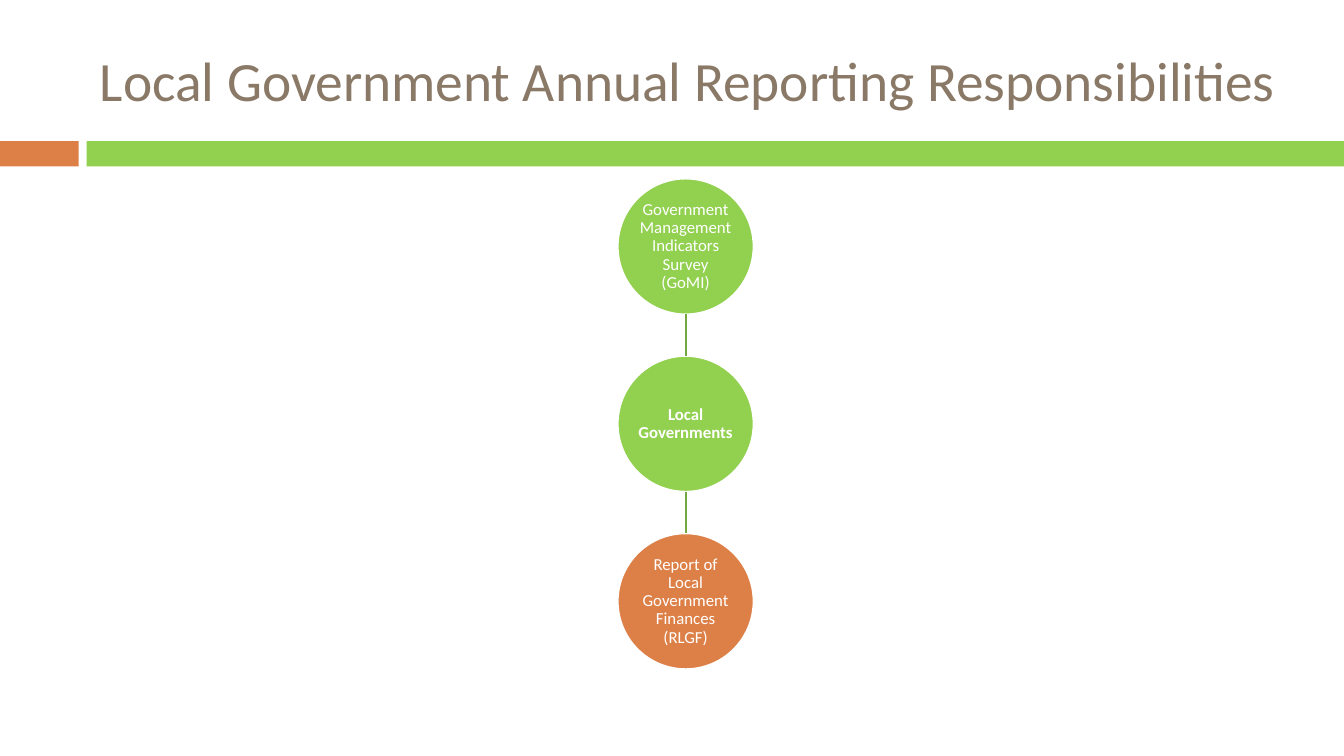
from lxml import etree
from pptx import Presentation
from pptx.dml.color import RGBColor
from pptx.enum.shapes import MSO_CONNECTOR, MSO_SHAPE
from pptx.enum.text import MSO_ANCHOR, MSO_AUTO_SIZE, PP_ALIGN
from pptx.oxml.ns import qn
from pptx.util import Inches, Pt

GREEN = RGBColor(0x92, 0xD0, 0x50)
DARK_GREEN = RGBColor(0x75, 0xA7, 0x40)
ORANGE = RGBColor(0xDD, 0x80, 0x47)
BROWN = RGBColor(0x8A, 0x79, 0x67)
WHITE = RGBColor(0xFF, 0xFF, 0xFF)

RECTANGLE, OVAL = MSO_SHAPE.RECTANGLE, MSO_SHAPE.OVAL
STRAIGHT = MSO_CONNECTOR.STRAIGHT
MIDDLE = MSO_ANCHOR.MIDDLE
LEFT, CENTER = PP_ALIGN.LEFT, PP_ALIGN.CENTER
NO_FIT = MSO_AUTO_SIZE.NONE

TITLE_ONLY = 5
WIDTH, HEIGHT = Inches(13.33), Inches(7.5)

# Shares of the slide's width (columns) and height (rows)
BAND_TOP, BAND_HEIGHT = 1.4 / 7.5, 0.25 / 7.5
ACCENT_WIDTH, BAND_LEFT = 0.78 / 13.33, 0.86 / 13.33
CHAIN_CENTER = 6.8 / 13.33
FIRST_TOP, STEP = 1.77 / 7.5, 1.76 / 7.5
DIAMETER = 1.35 / 7.5


class ReportingSlide:
    """Holds the style and the current slide."""

    font_name = "Calibri"
    line_width = Pt(1.5)

    def __init__(self, presentation):
        layout = presentation.slide_layouts[TITLE_ONLY]
        self.slide = presentation.slides.add_slide(layout)
        self.shapes = self.slide.shapes

    def style_text(self, shape, text, size, color, alignment, bold=False):
        frame = shape.text_frame
        frame.text = text
        frame.word_wrap = True
        frame.auto_size = NO_FIT
        frame.vertical_anchor = MIDDLE
        paragraph = frame.paragraphs[0]
        paragraph.alignment = alignment
        paragraph.font.name = self.font_name
        paragraph.font.size = Pt(size)
        paragraph.font.bold = bold
        paragraph.font.color.rgb = color
        return frame, paragraph

    def title(self, text, left, top, width, height):
        title = self.shapes.title
        title.left, title.width = int(left * WIDTH), int(width * WIDTH)
        title.top, title.height = int(top * HEIGHT), int(height * HEIGHT)
        frame, _ = self.style_text(title, text, 39.6, BROWN, LEFT)
        frame.margin_right = 0

    def band(self, left, right, color):
        band = self.shapes.add_shape(
            RECTANGLE, int(left * WIDTH), int(BAND_TOP * HEIGHT),
            int((right - left) * WIDTH), int(BAND_HEIGHT * HEIGHT))
        band.shadow.inherit = False
        band.fill.solid()
        band.fill.fore_color.rgb = color
        band.line.fill.background()

    def circle(self, text, row, color, bold):
        side = int(DIAMETER * HEIGHT)
        circle = self.shapes.add_shape(
            OVAL, int(CHAIN_CENTER * WIDTH) - side // 2,
            int((FIRST_TOP + row * STEP) * HEIGHT), side, side)
        circle.shadow.inherit = False
        circle.fill.solid()
        circle.fill.fore_color.rgb = color
        circle.line.color.rgb = WHITE
        circle.line.width = self.line_width
        frame, paragraph = self.style_text(circle, text, 12, WHITE, CENTER, bold)
        paragraph.line_spacing = 0.9
        # The longest word needs the full width inside the circle
        frame.margin_left = frame.margin_right = 0
        frame.margin_top = frame.margin_bottom = 0

    def link(self, row):
        """Draw the line from the circle in this row to the next one."""
        center = int(CHAIN_CENTER * WIDTH)
        top = FIRST_TOP + row * STEP + DIAMETER
        bottom = FIRST_TOP + (row + 1) * STEP
        link = self.shapes.add_connector(
            STRAIGHT, center, int(top * HEIGHT), center, int(bottom * HEIGHT))
        link.line.color.rgb = DARK_GREEN
        link.line.width = self.line_width
        etree.SubElement(link._element.spPr, qn("a:effectLst"))


def main():
    presentation = Presentation()
    presentation.slide_width, presentation.slide_height = WIDTH, HEIGHT
    page = ReportingSlide(presentation)

    # Title and the two-colour band below it
    page.title("Local Government Annual Reporting Responsibilities",
               0.89 / 13.33, 0.25 / 7.5, 11.89 / 13.33, 1.08 / 7.5)
    page.band(0, ACCENT_WIDTH, ORANGE)
    page.band(BAND_LEFT, 1, GREEN)

    # Chain of circles, with a line between neighbours
    circles = [
        ("Government Management Indicators Survey (GoMI)", GREEN, False),
        ("Local Governments", GREEN, True),
        ("Report of Local Government Finances (RLGF)", ORANGE, False),
    ]
    for row, (text, color, bold) in enumerate(circles):
        page.circle(text, row, color, bold)
    for row in range(len(circles) - 1):
        page.link(row)

    presentation.save("out.pptx")


if __name__ == "__main__":
    main()
